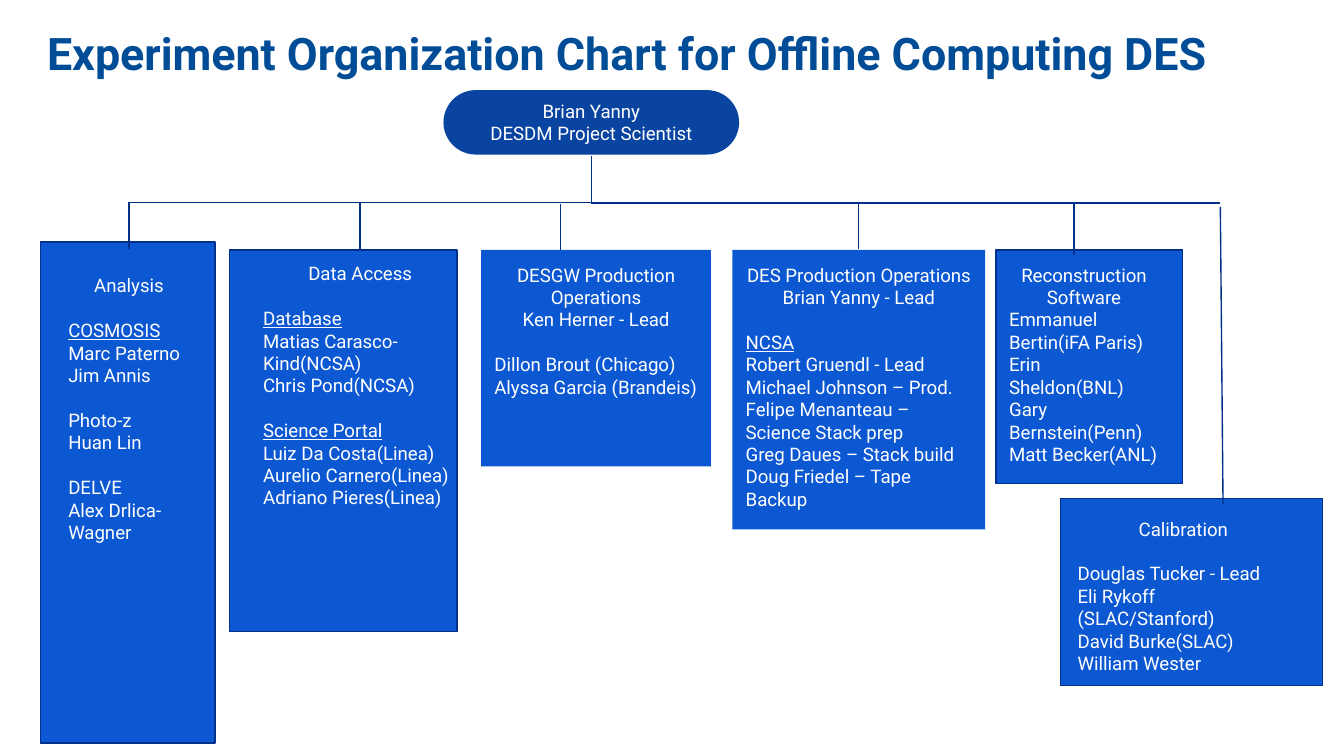
"""Build the organization chart slide for offline computing."""

from dataclasses import dataclass
from typing import NamedTuple, Optional

from lxml.etree import SubElement
from pptx import Presentation
from pptx.dml.color import RGBColor as Color
from pptx.enum.shapes import MSO_CONNECTOR as Connector, MSO_SHAPE as Preset
from pptx.enum.text import MSO_ANCHOR as Anchor, MSO_AUTO_SIZE as AutoSize, PP_ALIGN as Align
from pptx.oxml.ns import qn
from pptx.util import Inches, Pt


@dataclass(frozen=True)
class Theme:
    font: str = "Roboto"
    title: Color = Color(0x00, 0x4C, 0x97)
    leader: Color = Color(0x09, 0x44, 0xA1)
    panel: Color = Color(0x0C, 0x58, 0xD3)
    line: Color = Color(0x00, 0x30, 0x87)
    text: Color = Color(0xFF, 0xFF, 0xFF)
    title_size: int = 24
    text_size: int = 10
    line_width: float = 0.75
    gap: int = 12
    inset: float = 0.1


class Box(NamedTuple):
    left: float
    top: float
    width: float
    height: float


class Line(NamedTuple):
    text: str
    gap: bool = False
    underline: bool = False


@dataclass(frozen=True)
class Team:
    panel: Box
    headings: list[str]
    members: list[Line]
    text_area: Optional[Box] = None


class Link(NamedTuple):
    start: tuple[float, float]
    end: tuple[float, float]


THEME = Theme()
SLIDE_WIDTH = 10
SLIDE_HEIGHT = SLIDE_WIDTH * 9 / 16
LEADER = Box(3.3, 0.67, 2.2, 0.48)
TRUNK = Link((4.4, 1.16), (0.96, 1.85))
RAIL = 1.51

TEAMS = [
    Team(
        Box(5.45, 1.86, 1.88, 2.08),
        ["DES Production Operations", "Brian Yanny - Lead"],
        [
            Line("NCSA", gap=True, underline=True),
            Line("Robert Gruendl - Lead"),
            Line("Michael Johnson – Prod."),
            Line("Felipe Menanteau – Science Stack prep"),
            Line("Greg Daues – Stack build"),
            Line("Doug Friedel – Tape Backup"),
        ],
    ),
    Team(
        Box(3.58, 1.86, 1.71, 1.61),
        ["DESGW Production Operations", "Ken Herner - Lead"],
        [Line("Dillon Brout (Chicago)", gap=True), Line("Alyssa Garcia (Brandeis)")],
    ),
    Team(
        Box(1.71, 1.86, 1.69, 2.84),
        ["Data Access"],
        [
            Line("Database", gap=True, underline=True),
            Line("Matias Carasco-Kind(NCSA)"),
            Line("Chris Pond(NCSA)"),
            Line("Science Portal", gap=True, underline=True),
            Line("Luiz Da Costa(Linea)"),
            Line("Aurelio Carnero(Linea)"),
            Line("Adriano Pieres(Linea)"),
        ],
        Box(1.86, 1.85, 1.64, 2.62),
    ),
    Team(
        Box(7.89, 3.71, 1.95, 1.39),
        ["Calibration"],
        [
            Line("Douglas Tucker - Lead", gap=True),
            Line("Eli Rykoff (SLAC/Stanford)"),
            Line("David Burke(SLAC)"),
            Line("William Wester"),
        ],
        Box(7.92, 3.75, 1.77, 1.31),
    ),
    Team(
        Box(7.41, 1.86, 1.39, 1.74),
        ["Reconstruction Software"],
        [
            Line("Emmanuel Bertin(iFA Paris)"),
            Line("Erin Sheldon(BNL)"),
            Line("Gary Bernstein(Penn)"),
            Line("Matt Becker(ANL)"),
        ],
        Box(7.41, 1.86, 1.31, 1.74),
    ),
    Team(
        Box(0.3, 1.8, 1.3, 3.73),
        ["Analysis"],
        [
            Line("COSMOSIS", gap=True, underline=True),
            Line("Marc Paterno"),
            Line("Jim Annis"),
            Line("Photo-z", gap=True),
            Line("Huan Lin"),
            Line("DELVE", gap=True),
            Line("Alex Drlica-Wagner"),
        ],
        Box(0.41, 1.94, 1.1, 1.92),
    ),
]

LINKS = [
    Link((2.68, RAIL), (2.68, 1.85)),
    Link((4.17, 1.52), (4.17, 1.86)),
    Link((6.39, RAIL), (6.39, 1.85)),
    Link((4.4, RAIL), (9.08, RAIL)),
    Link((9.08, 1.54), (9.1, 3.75)),
    Link((7.99, RAIL), (7.99, 1.9)),
]


def add_text(frame, text: str, *, size=THEME.text_size, color=THEME.text, bold=False,
             underline=False, align=Align.LEFT, gap=False) -> None:
    """Append one formatted paragraph, reusing the first while it is empty."""
    first = frame.paragraphs[0]
    paragraph = frame.add_paragraph() if first.runs else first
    paragraph.alignment = align
    paragraph.space_before = Pt(THEME.gap if gap else 0)
    run = paragraph.add_run()
    run.text = text
    font = run.font
    font.name, font.size, font.bold, font.underline = THEME.font, Pt(size), bold, underline
    font.color.rgb = color


def prepare_frame(shape, anchor=Anchor.TOP):
    """Set the wrapping, insets and anchor of a text frame and return it."""
    frame = shape.text_frame
    frame.word_wrap, frame.auto_size, frame.vertical_anchor = True, AutoSize.NONE, anchor
    frame.margin_left = frame.margin_right = Inches(THEME.inset)
    frame.margin_top = frame.margin_bottom = Inches(THEME.inset)
    return frame


def add_box(slide, box: Box, fill: Color, preset=Preset.RECTANGLE, outlined=False):
    """Draw a filled shape, with an outline if asked."""
    shape = slide.shapes.add_shape(preset, *map(Inches, box))
    shape.shadow.inherit = False
    shape.fill.solid()
    shape.fill.fore_color.rgb = fill
    if outlined:
        shape.line.color.rgb = THEME.line
        shape.line.width = Pt(THEME.line_width)
    else:
        shape.line.fill.background()
    return shape


def add_team(slide, team: Team) -> None:
    """Draw a team panel with its headings and members."""
    shape = add_box(slide, team.panel, THEME.panel, outlined=team.text_area is not None)
    if team.text_area:
        shape = slide.shapes.add_textbox(*map(Inches, team.text_area))
    frame = prepare_frame(shape)
    for heading in team.headings:
        add_text(frame, heading, align=Align.CENTER)
    for member in team.members:
        add_text(frame, member.text, gap=member.gap, underline=member.underline)


def add_link(slide, link: Link, kind=Connector.STRAIGHT):
    """Draw a connector between two points."""
    connector = slide.shapes.add_connector(kind, *map(Inches, (*link.start, *link.end)))
    connector.line.color.rgb = THEME.line
    connector.line.width = Pt(THEME.line_width)
    SubElement(connector._element.spPr, qn("a:effectLst"))
    return connector


def add_trunk(slide, link: Link) -> None:
    """Draw an elbow that leaves downwards, as a quarter turn of a sideways one."""
    (x1, y1), (x2, y2) = link
    middle_x, middle_y = (x1 + x2) / 2, (y1 + y2) / 2
    half_width, half_height = (y2 - y1) / 2, (x1 - x2) / 2
    upright = Link((middle_x - half_width, middle_y - half_height),
                   (middle_x + half_width, middle_y + half_height))
    connector = add_link(slide, upright, Connector.ELBOW)
    connector._element.spPr.find(qn("a:xfrm")).set("rot", str(90 * 60000))


def main() -> None:
    """Assemble and save the slide."""
    presentation = Presentation()
    presentation.slide_width = Inches(SLIDE_WIDTH)
    presentation.slide_height = Inches(SLIDE_HEIGHT)
    slide = presentation.slides.add_slide(presentation.slide_layouts[5])
    title = slide.shapes.title
    title.left, title.top, title.width, title.height = map(Inches, Box(0.25, 0.09, 9.5, 0.52))
    add_text(prepare_frame(title), "Experiment Organization Chart for Offline Computing DES",
             size=THEME.title_size, color=THEME.title, bold=True)
    leader = add_box(slide, LEADER, THEME.leader, Preset.ROUNDED_RECTANGLE)
    leader.adjustments[0] = 0.5
    frame = prepare_frame(leader, Anchor.MIDDLE)
    for text in ("Brian Yanny", "DESDM Project Scientist"):
        add_text(frame, text, align=Align.CENTER)
    for team in TEAMS:
        add_team(slide, team)
    add_trunk(slide, TRUNK)
    for link in LINKS:
        add_link(slide, link)
    presentation.save("out.pptx")


if __name__ == "__main__":
    main()
